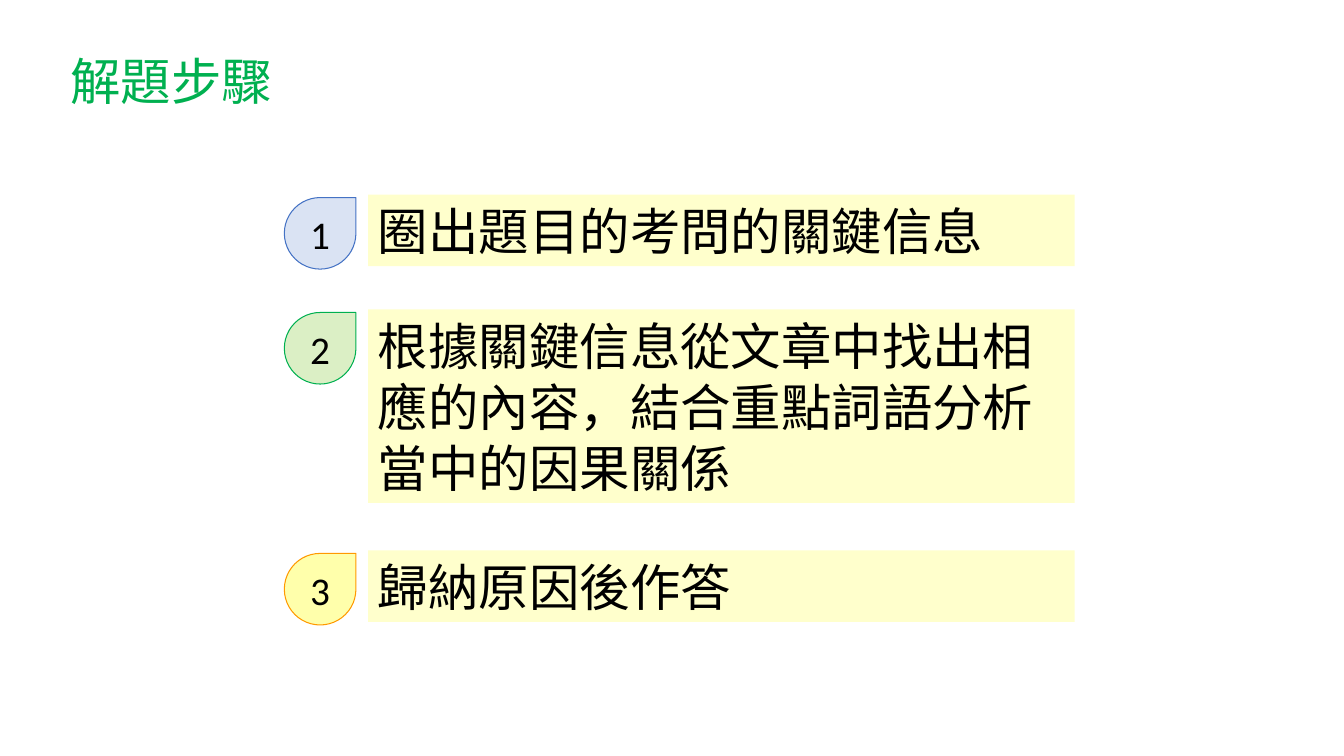
from lxml import etree
from pptx import Presentation
from pptx.dml.color import RGBColor
from pptx.enum.shapes import MSO_SHAPE
from pptx.enum.text import MSO_ANCHOR, PP_ALIGN
from pptx.oxml.ns import qn
from pptx.util import Inches, Pt

RECTANGLE, TEARDROP = MSO_SHAPE.RECTANGLE, MSO_SHAPE.TEAR
TOP, MIDDLE = MSO_ANCHOR.TOP, MSO_ANCHOR.MIDDLE
LEFT, CENTER = PP_ALIGN.LEFT, PP_ALIGN.CENTER
CHINESE_FONT = "Noto Sans CJK SC"

# Top of the step box, box height, badge fill, badge outline, wording
STEPS = [
    (1.93, 0.71, "8FAADC", "4472C4", "圈出題目的考問的關鍵信息"),
    (3.07, 1.92, "92D050", "00B050",
     "根據關鍵信息從文章中找出相應的內容，結合重點詞語分析當中的因果關係"),
    (5.46, 0.71, "FFFF00", "FF9900", "歸納原因後作答"),
]


def color(hex_value):
    return RGBColor.from_string(hex_value)


def write_text(shape, text, font_name, size, hex_value, alignment, anchor):
    """Fill the shape with one run, spaced at 1.21 times its size."""
    frame = shape.text_frame
    frame.vertical_anchor = anchor
    paragraph = frame.paragraphs[0]
    paragraph.alignment = alignment
    paragraph.line_spacing = Pt(round(size * 1.21, 1))
    run = paragraph.add_run()
    run.text = text
    run.font.name = font_name
    run.font.size = Pt(size)
    run.font.color.rgb = color(hex_value)
    east_asian = etree.Element(qn("a:ea"), typeface=CHINESE_FONT)
    run.font._element.find(qn("a:latin")).addnext(east_asian)


presentation = Presentation()
presentation.slide_width = Inches(13.33)
presentation.slide_height = Inches(7.5)
slide = presentation.slides.add_slide(presentation.slide_layouts[5])

title = slide.shapes.title
title.left, title.top = Inches(0.6), Inches(0.44)
title.width, title.height = Inches(2.22), Inches(0.71)
title.text_frame.word_wrap = False
write_text(title, "解題步驟", CHINESE_FONT, 36, "00B050", LEFT, TOP)

for number, (top, height, fill, outline, wording) in enumerate(STEPS, start=1):
    box = slide.shapes.add_shape(
        RECTANGLE, Inches(3.65), Inches(top), Inches(7.01), Inches(height))
    box.shadow.inherit = False
    box.fill.solid()
    box.fill.fore_color.rgb = color("FFFFCC")
    box.line.fill.background()
    box.text_frame.word_wrap = True
    write_text(box, wording, "Arial", 36, "000000", LEFT, TOP)

    badge = slide.shapes.add_shape(
        TEARDROP, Inches(2.82), Inches(top + 0.03), Inches(0.71), Inches(0.71))
    badge.shadow.inherit = False
    badge.fill.solid()
    badge.fill.fore_color.rgb = color(fill)
    fill_color = badge._element.spPr.find(qn("a:solidFill"))[0]
    etree.SubElement(fill_color, qn("a:alpha"), val="33000")
    badge.line.color.rgb = color(outline)
    badge.line.width = Pt(0.75)
    badge.text_frame.margin_left = badge.text_frame.margin_right = 0
    write_text(badge, str(number), "Calibri", 28, "000000", CENTER, MIDDLE)

presentation.save("out.pptx")
